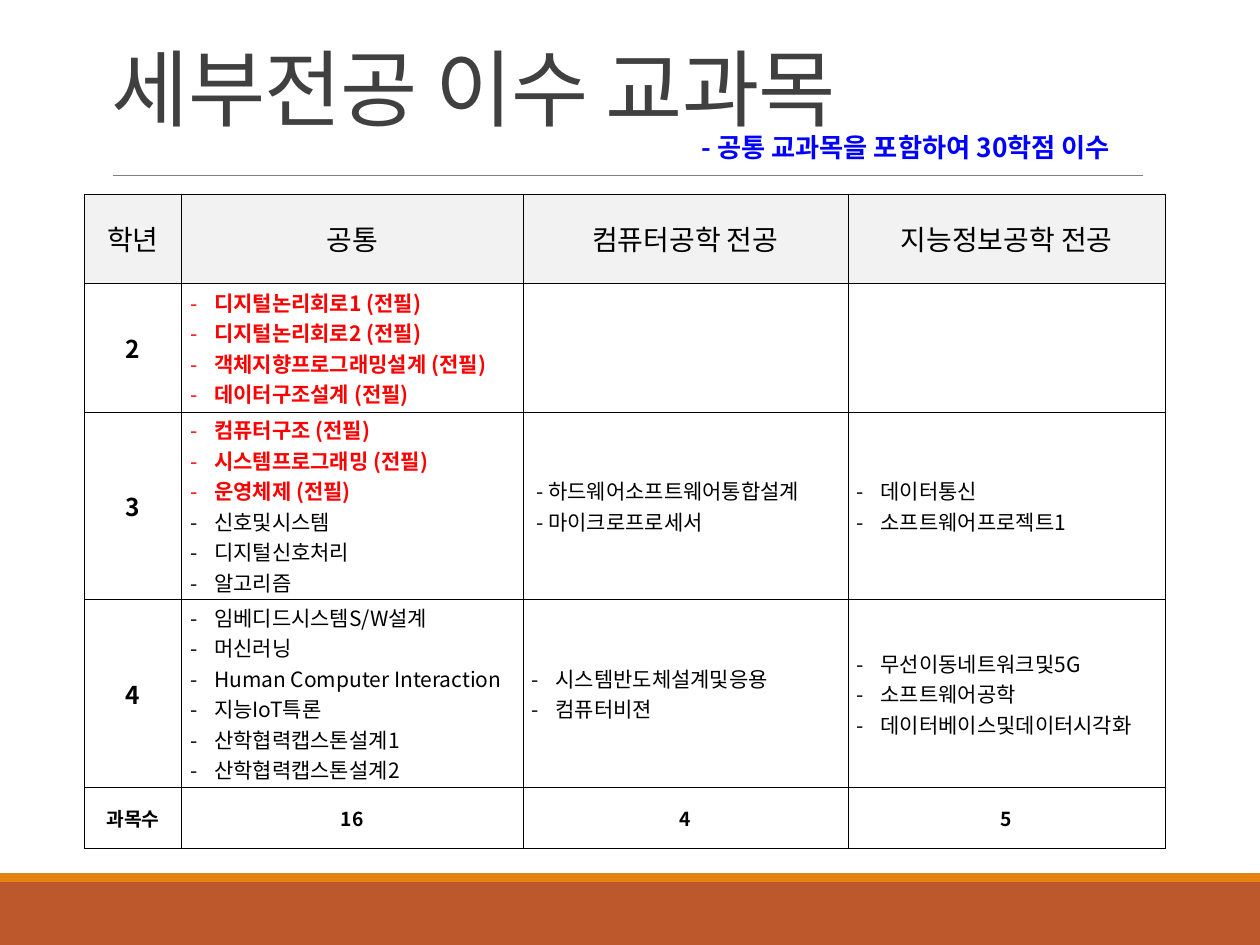
from lxml import etree
from pptx import Presentation
from pptx.dml.color import RGBColor
from pptx.enum.shapes import MSO_CONNECTOR, MSO_SHAPE
from pptx.enum.text import MSO_ANCHOR, MSO_AUTO_SIZE, PP_ALIGN
from pptx.oxml.ns import qn
from pptx.util import Inches, Pt

CENTER = PP_ALIGN.CENTER
MIDDLE, BOTTOM = MSO_ANCHOR.MIDDLE, MSO_ANCHOR.BOTTOM
FIT_SHAPE = MSO_AUTO_SIZE.SHAPE_TO_FIT_TEXT
RECTANGLE, STRAIGHT = MSO_SHAPE.RECTANGLE, MSO_CONNECTOR.STRAIGHT

BLACK = RGBColor(0, 0, 0)
RED = RGBColor(0xFF, 0, 0)
BLUE = RGBColor(0, 0, 0xFF)
CHARCOAL = RGBColor(0x40, 0x40, 0x40)
GRAY = RGBColor(0x80, 0x80, 0x80)
PALE = RGBColor(0xF2, 0xF2, 0xF2)
RUST = RGBColor(0xBD, 0x58, 0x2C)
ORANGE = RGBColor(0xE4, 0x83, 0x12)
TITLE_FONT, BODY_FONT = "Calibri", "Noto Sans CJK KR"

TITLE = "세부전공 이수 교과목"
CREDIT_NOTE = "- 공통 교과목을 포함하여 30학점 이수"
REQUIRED = "(전필)"
HEADINGS = ["학년", "공통", "컴퓨터공학 전공", "지능정보공학 전공"]
YEARS = [
    ("2", [
        ["디지털논리회로1 (전필)", "디지털논리회로2 (전필)",
         "객체지향프로그래밍설계 (전필)", "데이터구조설계 (전필)"],
        [],
        [],
    ]),
    ("3", [
        ["컴퓨터구조 (전필)", "시스템프로그래밍 (전필)", "운영체제 (전필)",
         "신호및시스템", "디지털신호처리", "알고리즘"],
        [" - 하드웨어소프트웨어통합설계", " - 마이크로프로세서"],
        ["데이터통신", "소프트웨어프로젝트1"],
    ]),
    ("4", [
        ["임베디드시스템S/W설계", "머신러닝", "Human Computer Interaction",
         "지능IoT특론", "산학협력캡스톤설계1", "산학협력캡스톤설계2"],
        ["시스템반도체설계및응용", "컴퓨터비젼"],
        ["무선이동네트워크및5G", "소프트웨어공학", "데이터베이스및데이터시각화"],
    ]),
]
TOTALS = ["과목수", "16", "4", "5"]

COLUMN_WIDTHS = [0.77, 2.71, 2.58, 2.52]
ROW_HEIGHTS = [0.71, 1.02, 1.49, 1.49, 0.48]
BORDER_WIDTH = Pt(0.28)
BULLET_INDENT = Inches(0.19)


def add_text(paragraph, text, size, color=BLACK, bold=False):
    run = paragraph.add_run()
    run.text = text
    run.font.size = Pt(size)
    run.font.bold = bold
    run.font.color.rgb = color
    run.font.name = BODY_FONT
    east_asian = etree.SubElement(run.font._element, qn("a:ea"))
    east_asian.set("typeface", BODY_FONT)


def add_band(slide, top, height, color):
    band = slide.shapes.add_shape(
        RECTANGLE, 0, Inches(top), Inches(10), Inches(height))
    band.shadow.inherit = False
    band.fill.solid()
    band.fill.fore_color.rgb = color
    band.line.fill.background()


def add_bullet(paragraph):
    properties = paragraph._p.get_or_add_pPr()
    properties.set("marL", str(BULLET_INDENT))
    properties.set("indent", str(-BULLET_INDENT))
    etree.SubElement(properties, qn("a:buFont")).set("typeface", BODY_FONT)
    etree.SubElement(properties, qn("a:buChar")).set("char", "-")


def style_cell(cell, fill, side_inset, end_inset):
    cell.vertical_anchor = MIDDLE
    cell.margin_left = cell.margin_right = Inches(side_inset)
    cell.margin_top = cell.margin_bottom = Inches(end_inset)
    properties = cell._tc.get_or_add_tcPr()
    for side in ("a:lnL", "a:lnR", "a:lnT", "a:lnB"):
        border = etree.SubElement(properties, qn(side))
        border.set("w", str(BORDER_WIDTH))
        paint = etree.SubElement(border, qn("a:solidFill"))
        etree.SubElement(paint, qn("a:srgbClr")).set("val", str(BLACK))
    if fill is None:
        cell.fill.background()
    else:
        cell.fill.solid()
        cell.fill.fore_color.rgb = fill


def fill_centered(cell, text, size, bold=True):
    paragraph = cell.text_frame.paragraphs[0]
    paragraph.alignment = CENTER
    add_text(paragraph, text, size, bold=bold)


def fill_courses(cell, courses):
    frame = cell.text_frame
    for index, course in enumerate(courses):
        paragraph = frame.add_paragraph() if index else frame.paragraphs[0]
        if not course.strip().startswith("-"):
            add_bullet(paragraph)
        required = course.endswith(REQUIRED)
        add_text(paragraph, course, 12, RED if required else BLACK, required)


def add_curriculum(slide):
    table = slide.shapes.add_table(
        len(ROW_HEIGHTS), len(COLUMN_WIDTHS), Inches(0.67), Inches(1.54),
        Inches(sum(COLUMN_WIDTHS)), Inches(sum(ROW_HEIGHTS))).table
    table.horz_banding = False
    for column, width in zip(table.columns, COLUMN_WIDTHS):
        column.width = Inches(width)
    for index, (row, height) in enumerate(zip(table.rows, ROW_HEIGHTS)):
        row.height = Inches(height)
        for cell in row.cells:
            if index == 0:
                style_cell(cell, PALE, 0, 0)
            else:
                style_cell(cell, None, 0.07, 0.02)
    for column, (heading, total) in enumerate(zip(HEADINGS, TOTALS)):
        fill_centered(table.cell(0, column), heading, 16, bold=False)
        fill_centered(table.cell(len(YEARS) + 1, column), total, 11)
    for row, (year, course_groups) in enumerate(YEARS, 1):
        fill_centered(table.cell(row, 0), year, 14)
        for column, courses in enumerate(course_groups, 1):
            fill_courses(table.cell(row, column), courses)


def add_title(slide):
    title = slide.shapes.add_textbox(
        Inches(0.79), Inches(0.15), Inches(8.25), Inches(0.99))
    frame = title.text_frame
    frame.word_wrap = True
    frame.vertical_anchor = BOTTOM
    paragraph = frame.paragraphs[0]
    paragraph.line_spacing = 0.85
    run = paragraph.add_run()
    run.text = TITLE
    run.font.name = TITLE_FONT
    run.font.size = Pt(48)
    run.font.color.rgb = CHARCOAL
    run.font._element.set("spc", "-50")


def add_credit_note(slide):
    note = slide.shapes.add_textbox(
        Inches(5.47), Inches(0.99), Inches(3.87), Inches(0.35))
    note.text_frame.word_wrap = False
    note.text_frame.auto_size = FIT_SHAPE
    add_text(note.text_frame.paragraphs[0], CREDIT_NOTE, 15, BLUE, True)


def add_divider(slide):
    divider = slide.shapes.add_connector(
        STRAIGHT, Inches(0.9), Inches(1.39), Inches(9.07), Inches(1.39))
    divider.line.color.rgb = GRAY
    divider.line.width = Pt(0.5)
    etree.SubElement(divider._element.spPr, qn("a:effectLst"))


def main():
    deck = Presentation()
    deck.slide_width, deck.slide_height = Inches(10), Inches(7.5)
    slide = deck.slides.add_slide(deck.slide_layouts[6])
    add_band(slide, 7, 0.5, RUST)
    add_band(slide, 6.93, 0.07, ORANGE)
    add_divider(slide)
    add_title(slide)
    add_curriculum(slide)
    add_credit_note(slide)
    deck.save("out.pptx")


if __name__ == "__main__":
    main()
